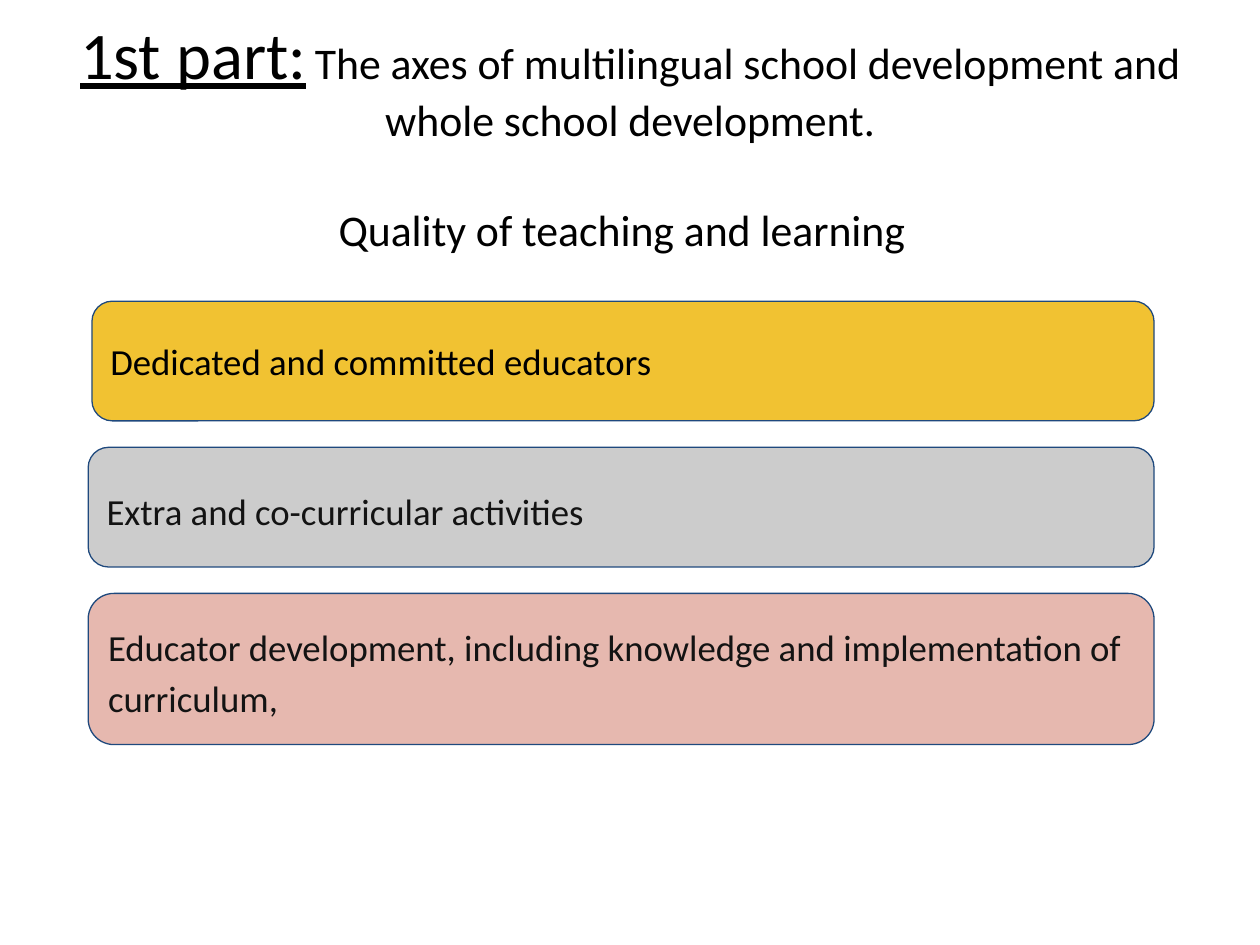
from pptx import Presentation
from pptx.dml.color import RGBColor
from pptx.enum.shapes import MSO_SHAPE as Shape
from pptx.enum.text import MSO_ANCHOR as Anchor, PP_ALIGN as Align
from pptx.util import Inches, Pt

BLACK = RGBColor(0x00, 0x00, 0x00)
INK = RGBColor(0x13, 0x13, 0x13)
NAVY = RGBColor(0x1F, 0x49, 0x7D)
YELLOW = RGBColor(0xF1, 0xC2, 0x32)
GREY = RGBColor(0xCC, 0xCC, 0xCC)
PINK = RGBColor(0xE6, 0xB8, 0xAF)


def set_frame(shape, anchor, inset):
    frame = shape.text_frame
    values = {
        "word_wrap": True,
        "vertical_anchor": anchor,
        "margin_left": Inches(0.1),
        "margin_right": Inches(0.1),
        "margin_top": Inches(inset),
        "margin_bottom": Inches(inset),
    }
    for name, value in values.items():
        setattr(frame, name, value)
    return frame.paragraphs[0]


def add_run(paragraph, text, size, color, underline=False):
    run = paragraph.add_run()
    run.text = text
    values = {"name": "Calibri", "size": Pt(size), "underline": underline}
    for name, value in values.items():
        setattr(run.font, name, value)
    run.font.color.rgb = color


presentation = Presentation()
presentation.slide_width = Inches(10)
presentation.slide_height = Inches(7.5)
slide = presentation.slides.add_slide(presentation.slide_layouts[6])

title = slide.shapes.add_textbox(Inches(0.5), Inches(0), Inches(9), Inches(1.25))
paragraph = set_frame(title, Anchor.MIDDLE, 0.05)
paragraph.alignment = Align.CENTER
add_run(paragraph, "1st part:", 38, BLACK, underline=True)
add_run(paragraph, " ", 21, BLACK)
add_run(
    paragraph,
    "The axes of multilingual school development and whole school development.",
    25,
    BLACK,
)

subtitle = slide.shapes.add_textbox(Inches(1.25), Inches(1.51), Inches(7.37), Inches(0.62))
paragraph = set_frame(subtitle, Anchor.TOP, 0.1)
paragraph.alignment = Align.CENTER
add_run(paragraph, "Quality of teaching and learning", 25, BLACK)

bars = [
    ("Dedicated and committed educators", 0.73, 0.95, YELLOW, BLACK, {}),
    (
        "Extra and co-curricular activities",
        0.7, 0.95, GREY, INK,
        {"line_spacing": 1.15, "space_after": Pt(36)},
    ),
    (
        "Educator development, including knowledge and implementation of curriculum,",
        0.7, 1.2, PINK, INK,
        {"line_spacing": 1.15, "space_after": Pt(36)},
    ),
]
right, top, gap = 9.16, 2.39, 0.21

for text, left, height, fill, color, spacing in bars:
    bar = slide.shapes.add_shape(
        Shape.ROUNDED_RECTANGLE,
        Inches(left), Inches(top), Inches(right - left), Inches(height),
    )
    bar.shadow.inherit = False
    bar.adjustments[0] = 0.17
    bar.fill.solid()
    bar.fill.fore_color.rgb = fill
    bar.line.color.rgb = NAVY
    bar.line.width = Pt(0.75)
    paragraph = set_frame(bar, Anchor.MIDDLE, 0.1)
    for name, value in {"alignment": Align.LEFT, **spacing}.items():
        setattr(paragraph, name, value)
    add_run(paragraph, text, 21, color)
    top += height + gap

presentation.save("out.pptx")
